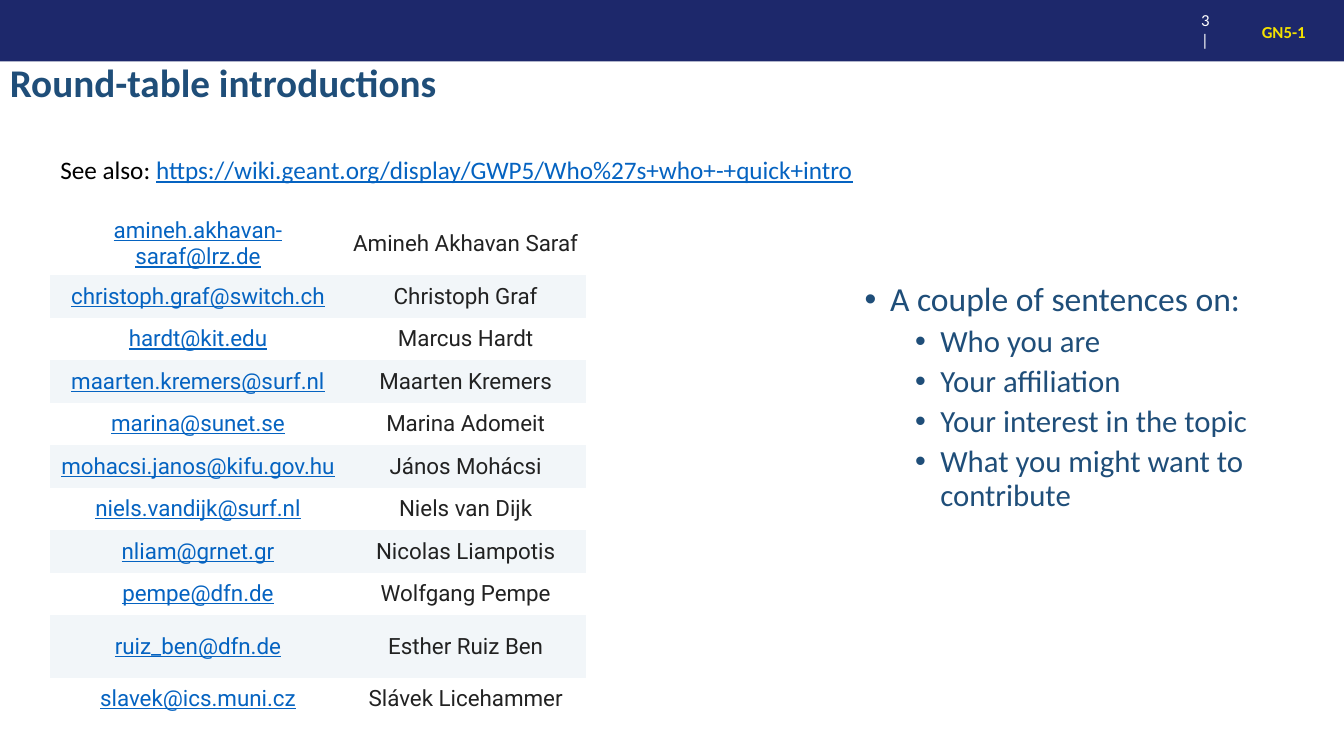
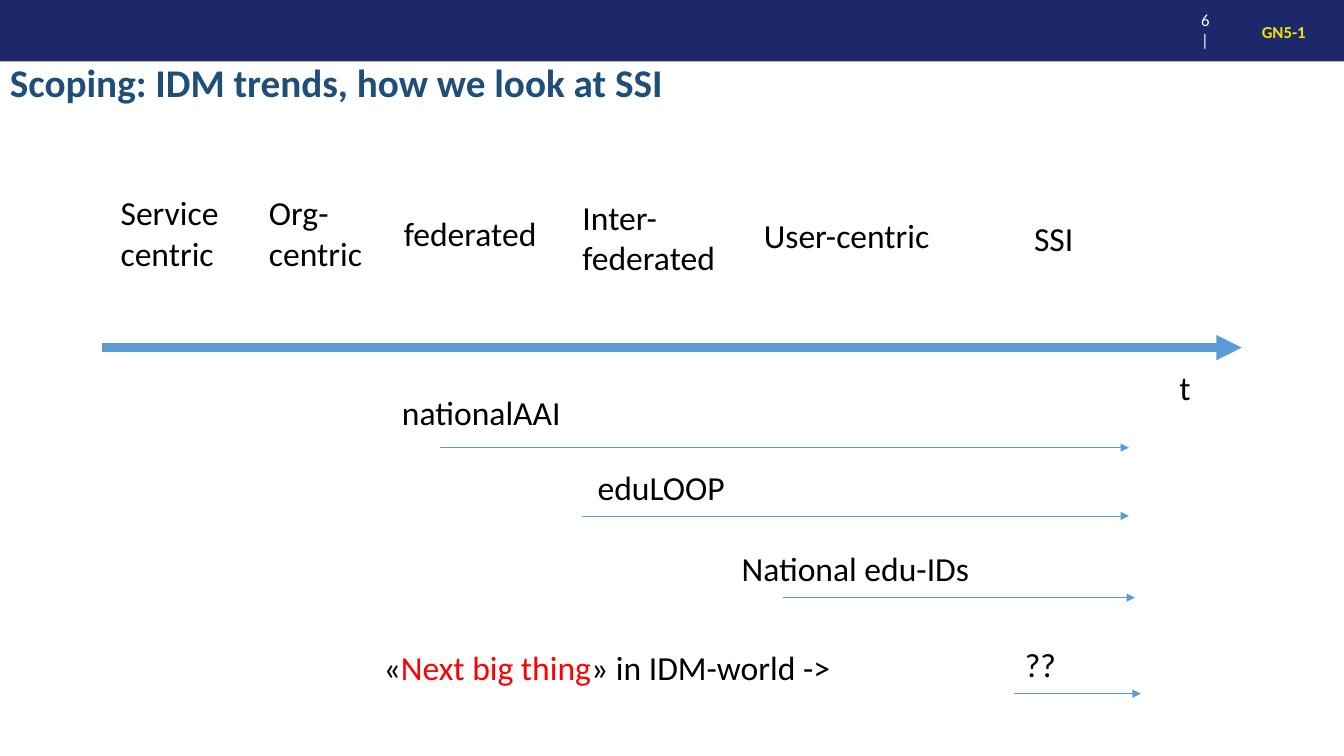
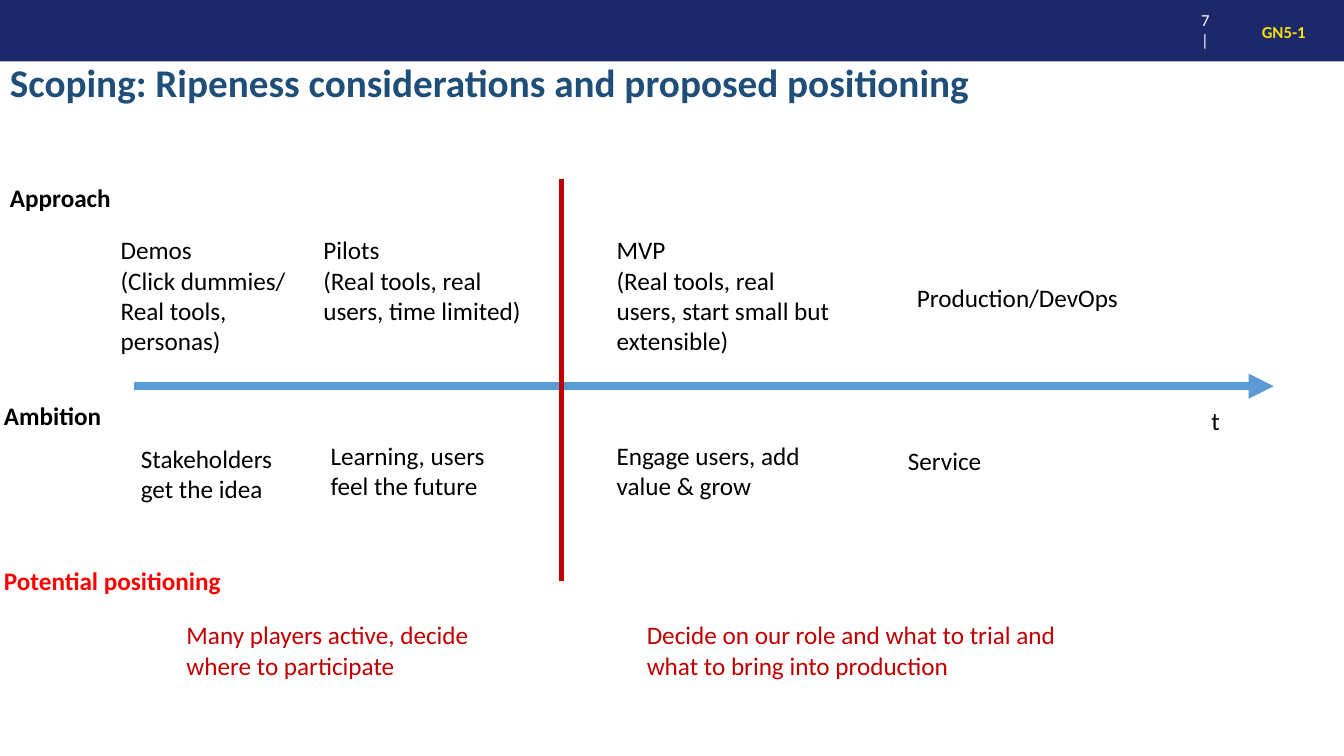
from dataclasses import dataclass

from pptx import Presentation
from pptx import util as u
from pptx.dml.color import RGBColor
from pptx.enum import shapes, text
from pptx.oxml.ns import qn
from lxml import etree

NO_TABLE_STYLE = "{2D5ABB26-0587-4C30-8999-92F81FD0307C}"


@dataclass(frozen=True)
class Theme:
    font: str = "Calibri"
    table_font: str = "Roboto"
    navy: str = "1D286B"
    title: str = "1F4E79"
    yellow: str = "F4E200"
    white: str = "FFFFFF"
    black: str = "000000"
    name: str = "222222"
    link: str = "0563C1"
    stripe: str = "F2F6F9"
    blue: str = "5B9BD5"
    red: str = "FF0000"
    dark_red: str = "C00000"
    header_size: int = 12
    table_size: int = 16
    body_size: int = 18
    sub_bullet_size: int = 22
    large_size: int = 24
    title_size: int = 28


THEME = Theme()


def child(parent, tag, **attributes):
    return etree.SubElement(parent, qn(tag), attributes)


def rgb(color):
    return RGBColor.from_string(color)


class Painter:
    """Holds the deck, its style and the slide being drawn."""

    def __init__(self, theme):
        self.theme = theme
        self.deck = Presentation()
        self.deck.slide_width = u.Cm(33.87)
        self.deck.slide_height = u.Cm(19.05)
        self.page = None

    def start(self, number, title):
        """Add a slide with the shared band, page number and title."""
        t = self.theme
        self.page = self.deck.slides.add_slide(self.deck.slide_layouts[6])
        band = self.page.shapes.add_shape(
            shapes.MSO_SHAPE.RECTANGLE, 0, 0, self.deck.slide_width, u.Cm(1.55))
        band.shadow.inherit = False
        band.fill.solid()
        band.fill.fore_color.rgb = rgb(t.navy)
        band.line.fill.background()

        frame = self.frame(30.02, 0.3, 1.75, 0.92, middle=True)
        para = frame.paragraphs[0]
        tabs = child(para._p.get_or_add_pPr(), "a:tabLst")
        child(tabs, "a:tab", pos=str(u.Cm(1.2)), algn="l")
        self.span(para, f"{number}\t|", t.header_size, t.white)

        frame = self.frame(31.55, 0.38, 2.3, 0.82, middle=True)
        self.span(frame.paragraphs[0], "GN5-1", t.header_size, t.yellow, bold=True)

        frame = self.frame(0, 1.1, 31.2, 2.05, middle=True)
        frame.paragraphs[0].line_spacing = 0.9
        self.span(frame.paragraphs[0], title, t.title_size, t.title, bold=True)

    def frame(self, left, top, width, height, middle=False):
        box = self.page.shapes.add_textbox(*map(u.Cm, (left, top, width, height)))
        frame = box.text_frame
        frame.word_wrap = True
        if middle:
            frame.vertical_anchor = text.MSO_ANCHOR.MIDDLE
        return frame

    def span(self, para, words, size, color, bold=False, underline=False, font=None):
        run = para.add_run()
        run.text = words
        run.font.name = font or self.theme.font
        run.font.size = u.Pt(size)
        run.font.color.rgb = rgb(color)
        run.font.bold = bold
        run.font.underline = underline

    def paragraphs(self, frame, items):
        """Pair each item with a paragraph, using the existing one first."""
        for index, item in enumerate(items):
            yield (frame.add_paragraph() if index else frame.paragraphs[0]), item

    def label(self, left, top, width, *lines, size=None, color=None, bold=False, rows=None):
        """Text with one paragraph per line; rows counts wrapped lines too."""
        size = size or self.theme.body_size
        height = u.Pt((rows or len(lines)) * size * 1.22).cm + 0.25
        frame = self.frame(left, top, width, height)
        for para, line in self.paragraphs(frame, lines):
            self.span(para, line, size, color or self.theme.black, bold)
        return frame.paragraphs[0]

    def bullets(self, left, top, width, height, items):
        t = self.theme
        frame = self.frame(left, top, width, height)
        for para, (level, words) in self.paragraphs(frame, items):
            para.level = level
            props = para._p.get_or_add_pPr()
            props.set("marL", str(u.Cm(0.64 + 1.27 * level)))
            props.set("indent", str(u.Cm(-0.64)))
            child(props, "a:buFont", typeface="Arial")
            child(props, "a:buChar", char="•")
            para.line_spacing = 0.9
            if level:
                para.space_before = u.Pt(5)
            self.span(para, words, t.sub_bullet_size if level else t.large_size, t.title)

    def line(self, x1, y1, x2, y2, color, width, arrow=True):
        connector = self.page.shapes.add_connector(
            shapes.MSO_CONNECTOR.STRAIGHT, *map(u.Cm, (x1, y1, x2, y2)))
        connector.line.color.rgb = rgb(color)
        connector.line.width = u.Pt(width)
        if arrow:
            child(connector.line._get_or_add_ln(), "a:tailEnd", type="triangle")
        child(connector._element.spPr, "a:effectLst")

    def time_axis(self, left, top, size):
        self.line(left, top, left + 28.72, top, self.theme.blue, 6)
        self.label(left + 26.9, top + 0.36, 0.9, "t", size=size)

    def people_table(self, left, top, widths, heights, people):
        t = self.theme
        holder = self.page.shapes.add_table(
            len(people), len(widths),
            *map(u.Cm, (left, top, sum(widths), sum(heights))))
        table = holder.table
        table.first_row = table.horz_banding = False
        next(holder._element.iter(qn("a:tableStyleId"))).text = NO_TABLE_STYLE
        for column, width in zip(table.columns, widths):
            column.width = u.Cm(width)
        for index, (row, person) in enumerate(zip(table.rows, people)):
            row.height = u.Cm(heights[index])
            for column, (cell, words) in enumerate(zip(row.cells, person)):
                cell.fill.solid()
                cell.fill.fore_color.rgb = rgb(t.stripe if index % 2 else t.white)
                cell.margin_left = cell.margin_right = u.Cm(0.08)
                cell.margin_top = cell.margin_bottom = u.Cm(0.03)
                cell.vertical_anchor = text.MSO_ANCHOR.MIDDLE
                para = cell.text_frame.paragraphs[0]
                para.alignment = text.PP_ALIGN.CENTER
                is_mail = column == 0
                self.span(para, words, t.table_size, t.link if is_mail else t.name,
                          underline=is_mail, font=t.table_font)


def introductions(painter):
    t = painter.theme
    painter.start(3, "Round-table introductions")
    painter.bullets(21.54, 6.99, 10.77, 9.58, [
        (0, "A couple of sentences on:"),
        (1, "Who you are"),
        (1, "Your affiliation"),
        (1, "Your interest in the topic"),
        (1, "What you might want to contribute"),
    ])
    people = [
        ("amineh.akhavan-saraf@lrz.de", "Amineh Akhavan Saraf"),
        ("christoph.graf@switch.ch", "Christoph Graf"),
        ("hardt@kit.edu", "Marcus Hardt"),
        ("maarten.kremers@surf.nl", "Maarten Kremers"),
        ("marina@sunet.se", "Marina Adomeit"),
        ("mohacsi.janos@kifu.gov.hu", "János Mohácsi"),
        ("niels.vandijk@surf.nl", "Niels van Dijk"),
        ("nliam@grnet.gr", "Nicolas Liampotis"),
        ("pempe@dfn.de", "Wolfgang Pempe"),
        ("ruiz_ben@dfn.de", "Esther Ruiz Ben"),
        ("slavek@ics.muni.cz", "Slávek Licehammer"),
    ]
    tall_rows = (0, 9)
    heights = [1.58 if row in tall_rows else 1.07 for row in range(len(people))]
    painter.people_table(1.27, 5.36, (7.44, 6.05), heights, people)
    para = painter.label(1.27, 3.76, 21, "See also: ")
    painter.span(para, "https://wiki.geant.org/display/GWP5/Who%27s+who+-+quick+intro",
                 t.body_size, t.link, underline=True)


def trends(painter):
    t = painter.theme
    size = t.large_size
    painter.start(6, "Scoping: IDM trends, how we look at SSI")
    painter.time_axis(2.57, 8.76, size)
    for left, top, width, *lines in [
        (2.79, 4.72, 3.2, "Service", "centric"),
        (6.53, 4.72, 3, "Org-", "centric"),
        (9.93, 5.23, 4.1, "federated"),
        (14.43, 4.83, 4.1, "Inter-", "federated"),
        (19, 5.28, 4.9, "User-centric"),
        (25.81, 5.36, 1.8, "SSI"),
    ]:
        painter.label(left, top, width, *lines, size=size)
    for words, left, top, width, start, end, level in [
        ("nationalAAI", 9.88, 9.75, 4.8, 11.1, 28.45, 11.28),
        ("eduLOOP", 14.81, 11.63, 3.9, 14.66, 28.45, 13),
        ("National edu-IDs", 18.44, 13.67, 6.6, 19.74, 28.6, 15.06),
        ("??", 25.58, 16.1, 1.6, 25.55, 28.75, 17.48),
    ]:
        painter.line(start, level, end, level, t.blue, 0.5)
        painter.label(left, top, width, words, size=size)
    para = painter.label(9.42, 16.18, 15, "«", size=size)
    painter.span(para, "Next big thing", size, t.red)
    painter.span(para, "» in IDM-world ->", size, t.black)


def positioning(painter):
    t = painter.theme
    painter.start(7, "Scoping: Ripeness considerations and proposed positioning")
    painter.time_axis(3.38, 9.73, t.body_size)
    for left, top, width, words, color in [
        (0, 4.47, 3.3, "Approach", t.black),
        (-0.15, 9.96, 3.3, "Ambition", t.black),
        (-0.15, 14.12, 6.4, "Potential positioning", t.red),
    ]:
        painter.label(left, top, width, words, color=color, bold=True)
    for left, top, width, rows, *lines in [
        (2.79, 5.79, 4.9, 4, "Demos", "(Click dummies/", "Real tools,", "personas)"),
        (7.9, 5.79, 5.8, 3, "Pilots", "(Real tools, real", "users, time limited)"),
        (15.29, 5.79, 6.07, 4, "MVP",
         "(Real tools, real users, start small but extensible)"),
        (22.86, 6.98, 5.8, 1, "Production/DevOps"),
        (3.3, 11.05, 4.22, 2, "Stakeholders get the idea"),
        (8.08, 10.97, 4.93, 2, "Learning, users feel the future"),
        (15.29, 10.97, 5.49, 2, "Engage users, add value & grow"),
        (22.63, 11.1, 2.6, 1, "Service"),
    ]:
        painter.label(left, top, width, *lines, rows=rows)
    painter.line(14.15, 4.5, 14.15, 14.63, t.dark_red, 4, arrow=False)
    for left, width, words in [
        (4.45, 8.92, "Many players active, decide where to participate"),
        (16.05, 10.8,
         "Decide on our role and what to trial and what to bring into production"),
    ]:
        painter.label(left, 15.49, width, words, color=t.dark_red, rows=2)


def main():
    painter = Painter(THEME)
    introductions(painter)
    trends(painter)
    positioning(painter)
    painter.deck.save("out.pptx")


if __name__ == "__main__":
    main()
